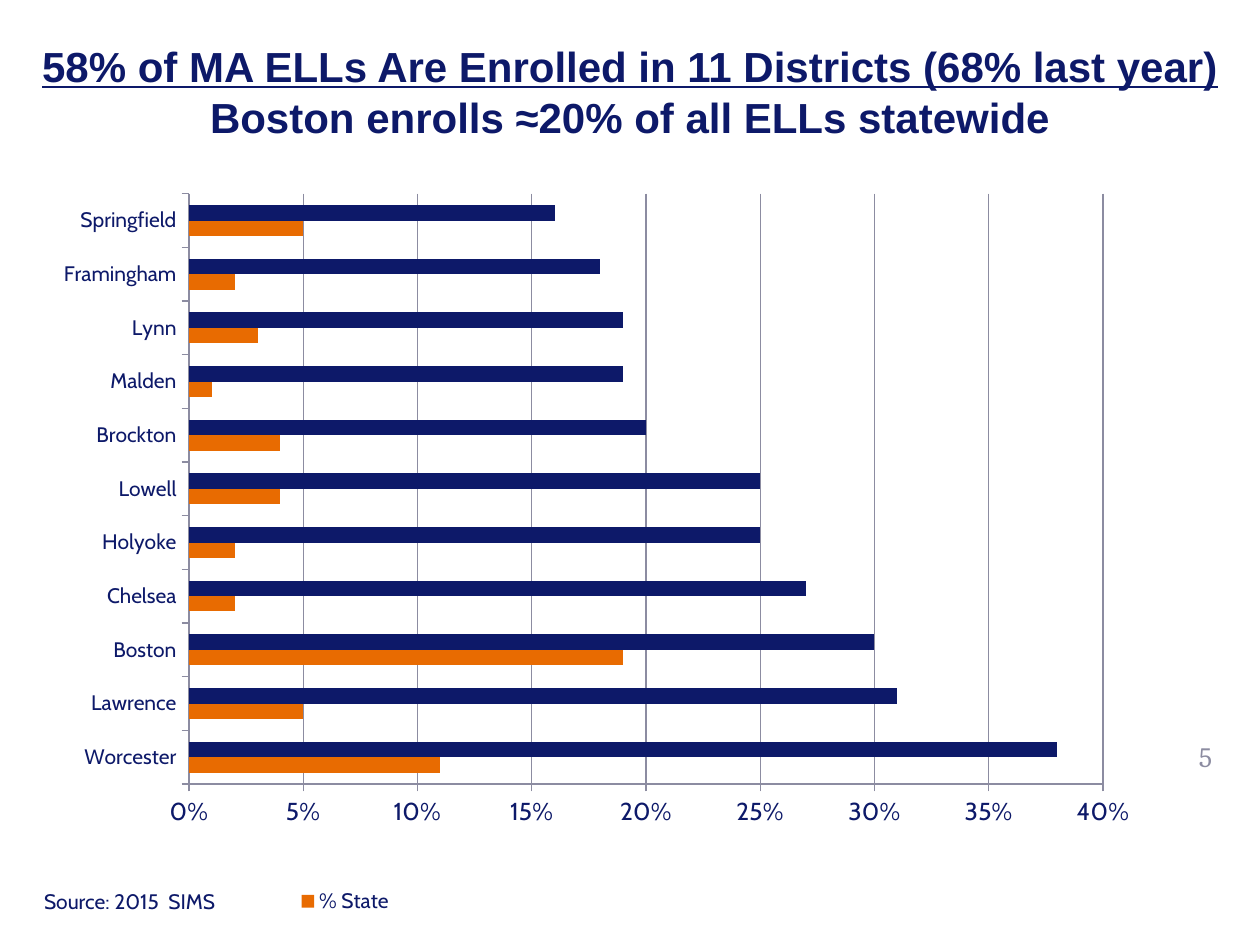
from typing import NamedTuple

import pptx
import pptx.chart.data
import pptx.dml.color
import pptx.enum.chart
import pptx.enum.text
import pptx.oxml
import pptx.oxml.ns
import pptx.util

RGBColor = pptx.dml.color.RGBColor
NAVY = RGBColor(0x0D, 0x19, 0x69)
ORANGE = RGBColor(0xE8, 0x6B, 0x01)
GRAY = RGBColor(0x8C, 0x8C, 0xA1)
EMU_PER_PX = 914400 / 126
Align = pptx.enum.text.PP_ALIGN
Anchor = pptx.enum.text.MSO_ANCHOR
qn = pptx.oxml.ns.qn


class Box(NamedTuple):
    left: int
    top: int
    width: int
    height: int


class Line(NamedTuple):
    text: str
    underline: bool = False


class District(NamedTuple):
    name: str
    state_share: float
    district_share: float


TITLE = [
    Line("58% of MA ELLs Are Enrolled in 11 Districts (68% last year)", True),
    Line("Boston enrolls ≈20% of all ELLs statewide"),
]
DISTRICTS = [
    District("Worcester", 0.11, 0.38),
    District("Lawrence", 0.05, 0.31),
    District("Boston", 0.19, 0.30),
    District("Chelsea", 0.02, 0.27),
    District("Holyoke", 0.02, 0.25),
    District("Lowell", 0.04, 0.25),
    District("Brockton", 0.04, 0.20),
    District("Malden", 0.01, 0.19),
    District("Lynn", 0.03, 0.19),
    District("Framingham", 0.02, 0.18),
    District("Springfield", 0.05, 0.16),
]


def emu(px: int) -> int:
    return round(px * EMU_PER_PX)


def place(shape, box: Box) -> None:
    shape.left, shape.top, shape.width, shape.height = map(emu, box)


def set_font(font, size: int, name: str = "Cabin", color: RGBColor = NAVY, bold: bool = False) -> None:
    font.name = name
    font.size = pptx.util.Pt(size)
    font.bold = bold
    font.color.rgb = color


def write_text(shape, lines: list[Line], *, size: int, name: str = "Cabin",
               color: RGBColor = NAVY, bold: bool = False,
               align=Align.LEFT, anchor=Anchor.TOP) -> None:
    frame = shape.text_frame
    frame.word_wrap = True
    frame.auto_size = pptx.enum.text.MSO_AUTO_SIZE.NONE
    frame.vertical_anchor = anchor
    frame.margin_left = frame.margin_right = 0 if align == Align.CENTER else emu(12)
    for index, line in enumerate(lines):
        paragraph = frame.add_paragraph() if index else frame.paragraphs[0]
        paragraph.alignment = align
        run = paragraph.add_run()
        run.text = line.text
        set_font(run.font, size, name, color, bold)
        run.font.underline = line.underline


def add_text(slide, box: Box, text: str, **text_format) -> None:
    shape = slide.shapes.add_textbox(*map(emu, box))
    write_text(shape, [Line(text)], **text_format)


def manual_layout(target: str, x: float, y: float, width: float, height: float):
    values = [("layoutTarget", target)] if target else []
    values += [("xMode", "edge"), ("yMode", "edge"),
               ("x", x), ("y", y), ("w", width), ("h", height)]
    items = "".join(f'<c:{tag} val="{value}"/>' for tag, value in values)
    return pptx.oxml.parse_xml(
        f'<c:layout {pptx.oxml.ns.nsdecls("c")}><c:manualLayout>{items}</c:manualLayout></c:layout>')


def replace_layout(parent, layout, position: int) -> None:
    for existing in parent.findall(qn("c:layout")):
        parent.remove(existing)
    parent.insert(position, layout)


def format_axis(axis, size: int) -> None:
    set_font(axis.tick_labels.font, size)
    axis.format.line.color.rgb = GRAY
    axis.format.line.width = pptx.util.Pt(0.75)
    axis.major_tick_mark = pptx.enum.chart.XL_TICK_MARK.OUTSIDE


def format_legend(chart) -> None:
    chart.has_legend = True
    legend = chart.legend
    legend.position = pptx.enum.chart.XL_LEGEND_POSITION.RIGHT
    legend.include_in_layout = False
    set_font(legend.font, 12)
    element = legend._element
    replace_layout(element, manual_layout("", 0.2, 0.95, 0.12, 0.04), 1)
    element.insert(1, pptx.oxml.parse_xml(
        f'<c:legendEntry {pptx.oxml.ns.nsdecls("c")}><c:idx val="0"/><c:delete val="1"/></c:legendEntry>'))


def add_district_chart(slide, box: Box) -> None:
    data = pptx.chart.data.CategoryChartData(number_format="0%")
    data.categories = [district.name for district in DISTRICTS]
    data.add_series("% State", [district.state_share for district in DISTRICTS])
    data.add_series("% District", [district.district_share for district in DISTRICTS])
    chart = slide.shapes.add_chart(
        pptx.enum.chart.XL_CHART_TYPE.BAR_CLUSTERED, *map(emu, box), data).chart
    chart.has_title = False
    set_font(chart.font, 18)
    plot = chart.plots[0]
    plot.vary_by_categories = False
    plot.gap_width = 150
    plot.overlap = 0
    for series, color in zip(plot.series, (ORANGE, NAVY)):
        series.format.fill.solid()
        series.format.fill.fore_color.rgb = color
        series.invert_if_negative = False
    format_axis(chart.category_axis, 12)
    value_axis = chart.value_axis
    format_axis(value_axis, 14)
    value_axis.minimum_scale = 0
    value_axis.maximum_scale = 0.4
    value_axis.major_unit = 0.05
    value_axis.tick_labels.number_format = "0%"
    value_axis.tick_labels.number_format_is_linked = False
    value_axis.has_major_gridlines = True
    value_axis.major_gridlines.format.line.color.rgb = GRAY
    value_axis.major_gridlines.format.line.width = pptx.util.Pt(0.75)
    plot_area = chart._chartSpace.chart.plotArea
    replace_layout(plot_area, manual_layout("inner", 0.126, 0.034, 0.784, 0.781), 0)
    format_legend(chart)


def main() -> None:
    presentation = pptx.Presentation()
    presentation.slide_width = emu(1260)
    presentation.slide_height = emu(945)
    slide = presentation.slides.add_slide(presentation.slide_layouts[5])
    title = slide.shapes.title
    place(title, Box(21, 23, 1218, 136))
    write_text(title, TITLE, size=24, name="Arial", bold=True,
               align=Align.CENTER, anchor=Anchor.MIDDLE)
    add_text(slide, Box(1169, 725, 73, 63), "5", size=16, name="Cambria",
             color=GRAY, align=Align.CENTER, anchor=Anchor.MIDDLE)
    add_district_chart(slide, Box(42, 168, 1166, 756))
    add_text(slide, Box(32, 882, 220, 38), "Source: 2015  SIMS", size=12)
    presentation.save("out.pptx")


if __name__ == "__main__":
    main()
